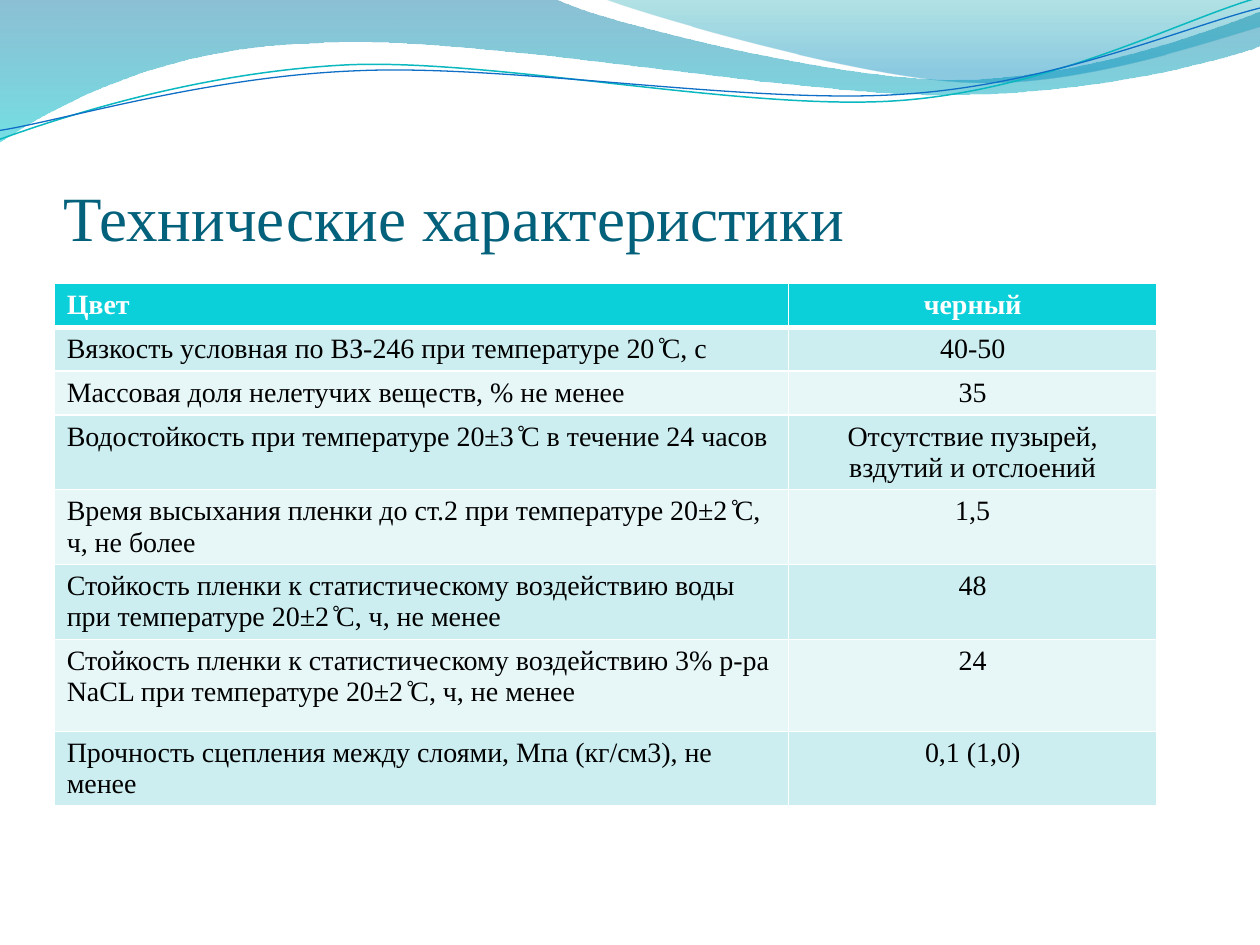
from lxml import etree
from pptx import Presentation
from pptx.dml.color import RGBColor
from pptx.enum.text import MSO_ANCHOR, PP_ALIGN
from pptx.oxml.ns import qn
from pptx.util import Inches, Pt

BOTTOM = MSO_ANCHOR.BOTTOM
LEFT, CENTER = PP_ALIGN.LEFT, PP_ALIGN.CENTER
FONT = "Times New Roman"
WHITE, BLACK, TITLE_COLOR = "FFFFFF", "000000", "04617B"
HEADER_FILL, BAND_FILLS = "0BD0D9", ("CCEEF1", "E7F7F8")
LINE_ROTATION = 357.3

COLUMN_WIDTHS = (5.83, 2.92)
ROW_HEIGHTS = (0.32, 0.32, 0.32, 0.55, 0.55, 0.55, 0.73, 0.55)
ROWS = (
    ("Цвет", "черный"),
    ("Вязкость условная по ВЗ-246 при температуре 20 ̊С, с", "40-50"),
    ("Массовая доля нелетучих веществ, % не менее", "35"),
    ("Водостойкость при температуре 20±3 ̊С в течение 24 часов",
     "Отсутствие пузырей, вздутий и отслоений"),
    ("Время высыхания пленки до ст.2 при температуре 20±2 ̊С, ч, не более", "1,5"),
    ("Стойкость пленки к статистическому воздействию воды при температуре 20±2 ̊С, "
     "ч, не менее", "48"),
    ("Стойкость пленки к статистическому воздействию 3% р-ра NaCL при температуре "
     "20±2 ̊С, ч, не менее", "24"),
    ("Прочность сцепления между слоями, Мпа (кг/см3), не менее", "0,1 (1,0)"),
)

BACK_WAVE = (
    ((0, 0),),
    ((4.4, -0.01),),
    ((4.76, 0.17), (6.64, 0.63), (7.58, 0.63)),
    ((8.53, 0.63), (9.58, 0.26), (10, 0.09)),
    ((10.01, 0.36),),
    ((9.83, 0.44), (8.7, 0.76), (7.46, 0.75)),
    ((6.22, 0.75), (3.82, 0.28), (2.57, 0.34)),
    ((1.29, 0.36), (0.46, 0.83), (-0.01, 1.13)),
    ((0, 0),),
)
FRONT_WAVE = (
    ((4.79, -0.01),),
    ((5.09, 0.11), (6.82, 0.62), (7.69, 0.65)),
    ((8.56, 0.69), (9.61, 0.32), (10, 0.21)),
    ((10, 0),),
    ((4.79, -0.01),),
)
TEAL_LINE = (
    ((-0.02, 0.87),),
    ((0.47, 0.72), (1.58, 0.41), (2.78, 0.41)),
    ((3.96, 0.42), (5.91, 0.93), (7.12, 0.9)),
    ((8.32, 0.87), (9.4, 0.36), (10, 0.22)),
)
BLUE_LINE = (
    ((-0.02, 0.8),),
    ((0.46, 0.75), (1.64, 0.45), (2.83, 0.46)),
    ((4.03, 0.46), (5.96, 0.88), (7.16, 0.85)),
    ((8.35, 0.83), (9.42, 0.42), (10.02, 0.3)),
)


def color(value):
    """Return the colour for a hex string."""
    return RGBColor.from_string(value)


def add_outline(page, segments, closed):
    """Add a freeform of lines (one point) and cubic curves (three points)."""
    points = [(Inches(x), Inches(y)) for segment in segments for x, y in segment]
    builder = page.shapes.build_freeform(*points[0])
    builder.add_line_segments(points[1:], close=closed)
    shape = builder.convert_to_shape()
    shape.shadow.inherit = False
    steps = iter(list(shape.element.iter(qn("a:lnTo"))))
    for segment in segments[1:]:
        first, *others = [next(steps) for _ in segment]
        if others:
            first.tag = qn("a:cubicBezTo")
        for step in others:
            first.append(step[0])
            step.getparent().remove(step)
    return shape


def add_wave(page, segments, stops):
    """Add a wave with a vertical gradient of position, colour and opacity."""
    shape = add_outline(page, segments, True)
    shape.line.fill.background()
    shape.fill.gradient()
    shape.fill.gradient_angle = 270
    for stop, (position, value, _) in zip(shape.fill.gradient_stops, stops):
        stop.position = position
        stop.color.rgb = color(value)
    for tone, (_, _, opacity) in zip(shape.element.iter(qn("a:srgbClr")), stops):
        etree.SubElement(tone, qn("a:alpha"), val=str(opacity * 1000))


def add_wave_line(page, segments, value, width):
    """Add an open, slightly turned curved line."""
    shape = add_outline(page, segments, False)
    shape.rotation = LINE_ROTATION
    shape.fill.background()
    shape.line.color.rgb = color(value)
    shape.line.width = Pt(width)


def format_text(para, size, value, align=LEFT, bold=False):
    """Format a paragraph and its runs."""
    para.alignment = align
    for span in para.runs:
        span.font.name = FONT
        span.font.size = Pt(size)
        span.font.bold = bold
        span.font.color.rgb = color(value)


def set_title(page, text):
    """Fill and place the title placeholder in front of the waves."""
    title = page.shapes.title
    title.element.getparent().append(title.element)
    title.left, title.top = Inches(0.5), Inches(0.77)
    title.width, title.height = Inches(9), Inches(1.25)
    frame = title.text_frame
    frame.text = text
    frame.vertical_anchor = BOTTOM
    frame.margin_left = frame.margin_right = frame.margin_bottom = 0
    frame.margin_top = Inches(0.05)
    format_text(frame.paragraphs[0], 36, TITLE_COLOR)


def set_borders(cell, top, bottom):
    """Give a cell white borders, with top and bottom widths in points."""
    properties = cell._tc.get_or_add_tcPr()
    for side, width in (("L", 1), ("R", 1), ("T", top), ("B", bottom)):
        border = etree.SubElement(properties, qn(f"a:ln{side}"), w=str(Pt(width)))
        fill = etree.SubElement(border, qn("a:solidFill"))
        etree.SubElement(fill, qn("a:srgbClr"), val=WHITE)


def add_properties_table(page):
    """Add the banded table of technical properties."""
    frame = page.shapes.add_table(
        len(ROWS), len(COLUMN_WIDTHS), Inches(0.43), Inches(2.25),
        Inches(sum(COLUMN_WIDTHS)), Inches(sum(ROW_HEIGHTS)))
    table = frame.table
    for column, width in zip(table.columns, COLUMN_WIDTHS):
        column.width = Inches(width)
    for index, texts in enumerate(ROWS):
        header = index == 0
        table.rows[index].height = Inches(ROW_HEIGHTS[index])
        for cell, text, align in zip(table.rows[index].cells, texts, (LEFT, CENTER)):
            cell.text = text
            format_text(cell.text_frame.paragraphs[0], 16,
                        WHITE if header else BLACK, align, header)
            set_borders(cell, 3 if index == 1 else 1, 3 if header else 1)
            cell.fill.solid()
            cell.fill.fore_color.rgb = color(
                HEADER_FILL if header else BAND_FILLS[(index - 1) % 2])


def main():
    """Build the slide and save the deck."""
    deck = Presentation()
    deck.slide_width, deck.slide_height = Inches(10), Inches(7.5)
    page = deck.slides.add_slide(deck.slide_layouts[5])
    add_wave(page, BACK_WAVE, ((0, "0074A1", 45), (1, "00C6CF", 55)))
    add_wave(page, FRONT_WAVE, ((0, "00A1A9", 30), (0.8, "008BBF", 45)))
    add_wave_line(page, TEAL_LINE, "0AB8BF", 0.85)
    add_wave_line(page, BLUE_LINE, "0F6FC6", 0.75)
    set_title(page, "Технические характеристики")
    add_properties_table(page)
    deck.save("out.pptx")


if __name__ == "__main__":
    main()
